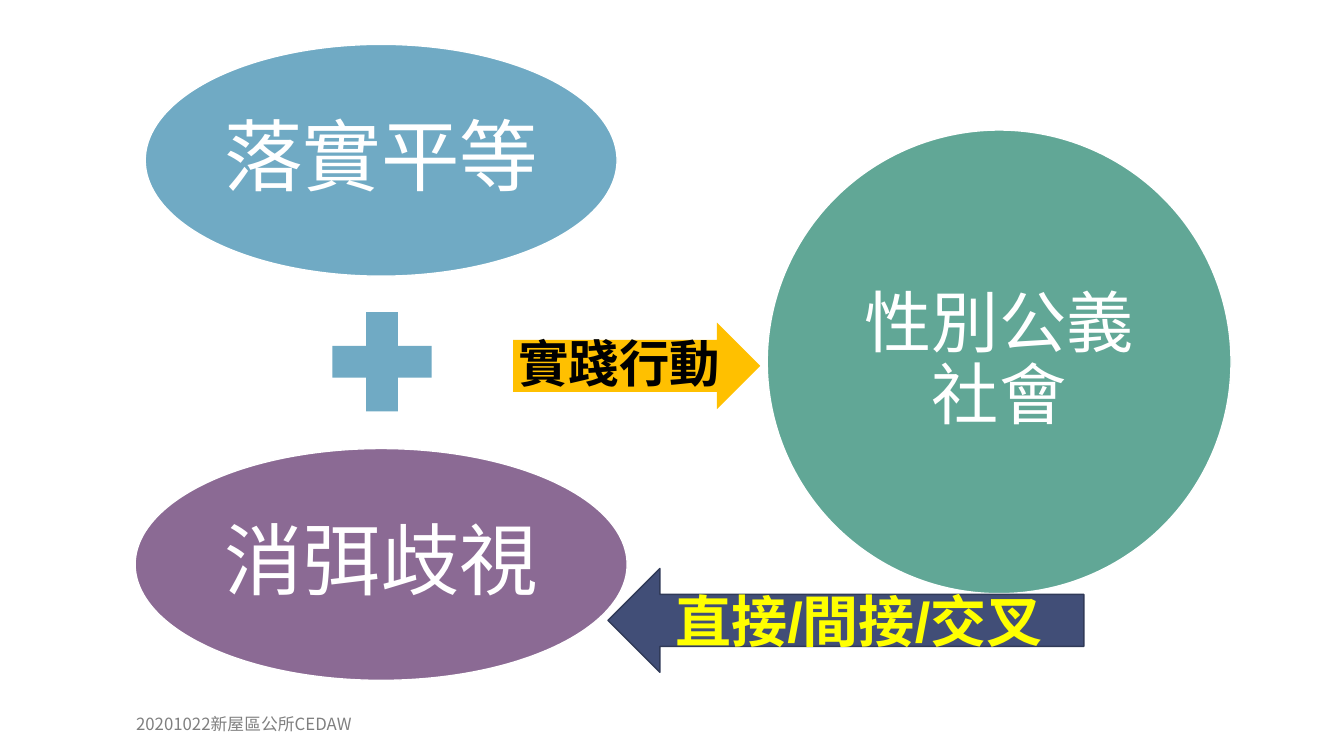
from dataclasses import dataclass

from pptx import Presentation
from pptx.dml.color import RGBColor
from pptx.enum import shapes, text
from pptx.util import Inches, Pt


@dataclass(frozen=True)
class Theme:
    # Colours
    white: str = "FFFFFF"
    black: str = "000000"
    yellow: str = "FFFF00"
    grey: str = "808080"
    blue: str = "70AAC4"
    purple: str = "8B6A94"
    green: str = "61A796"
    amber: str = "FFC000"
    navy: str = "414E77"
    navy_edge: str = "303A58"
    # Type
    display_font: str = "Quicksand"
    label_font: str = "Arial"
    footer_font: str = "Noto Sans CJK TC"
    concept_size: int = 56
    goal_size: int = 48
    type_size: int = 40
    action_size: int = 36
    footer_size: int = 12
    tight: float = 0.9


class SlideBuilder:
    def __init__(self, slide, theme):
        self.slide = slide
        self.theme = theme

    def preset(self, kind, box, fill, edge=None):
        shape = self.slide.shapes.add_shape(kind, *map(Inches, box))
        shape.shadow.inherit = False
        shape.fill.solid()
        shape.fill.fore_color.rgb = RGBColor.from_string(fill)
        if edge:
            shape.line.color.rgb = RGBColor.from_string(edge)
            shape.line.width = Pt(1)
        else:
            shape.line.fill.background()
        return shape

    def label(self, shape, words, font, size, color, bold=False, spacing=None,
              insets=(0.1, 0.05, 0.1, 0.05), align=text.PP_ALIGN.CENTER,
              anchor=text.MSO_ANCHOR.MIDDLE):
        frame = shape.text_frame
        frame.word_wrap = True
        frame.vertical_anchor = anchor
        (frame.margin_left, frame.margin_top,
         frame.margin_right, frame.margin_bottom) = map(Inches, insets)
        paragraph = frame.paragraphs[0]
        paragraph.text = words
        paragraph.alignment = align
        if spacing:
            paragraph.line_spacing = spacing
        paragraph.font.name = font
        paragraph.font.size = Pt(size)
        paragraph.font.bold = bold
        paragraph.font.color.rgb = RGBColor.from_string(color)

    def ellipse(self, box, words, fill, size, inset):
        theme = self.theme
        shape = self.preset(shapes.MSO_SHAPE.OVAL, box, fill, theme.white)
        self.label(shape, words, theme.display_font, size, theme.white,
                   spacing=theme.tight, insets=(inset,) * 4)

    def plus(self, box, fill):
        self.preset(shapes.MSO_SHAPE.MATH_PLUS, box, fill)

    def action_arrow(self, box, words):
        theme = self.theme
        shape = self.preset(shapes.MSO_SHAPE.RIGHT_ARROW, box, theme.amber)
        shape.adjustments[0] = 0.6
        self.label(shape, words, theme.display_font, theme.action_size,
                   theme.black, bold=True, spacing=theme.tight,
                   insets=(0, 0, 0.09, 0))

    def type_arrow(self, box, words):
        theme = self.theme
        shape = self.preset(shapes.MSO_SHAPE.LEFT_ARROW, box, theme.navy,
                            theme.navy_edge)
        self.label(shape, words, theme.label_font, theme.type_size,
                   theme.yellow, bold=True)

    def footer(self, box, words):
        theme = self.theme
        shape = self.slide.shapes.add_textbox(*map(Inches, box))
        self.label(shape, words, theme.footer_font, theme.footer_size,
                   theme.grey, insets=(0.13, 0.07, 0.13, 0.07),
                   align=text.PP_ALIGN.LEFT, anchor=text.MSO_ANCHOR.BOTTOM)


def main():
    presentation = Presentation()
    presentation.slide_width = Inches(13.33)
    presentation.slide_height = Inches(7.5)
    slide = presentation.slides.add_slide(presentation.slide_layouts[6])
    theme = Theme()
    builder = SlideBuilder(slide, theme)

    # Two conditions joined by a plus
    builder.ellipse((1.44, 0.44, 4.68, 2.3), "落實平等", theme.blue,
                    theme.concept_size, 0.08)
    builder.plus((3.12, 2.92, 1.34, 1.34), theme.blue)
    builder.ellipse((1.34, 4.45, 4.88, 2.3), "消弭歧視", theme.purple,
                    theme.concept_size, 0.08)

    # Action leading to the goal
    builder.action_arrow((5.09, 3.2, 2.45, 0.86), "實踐行動")
    builder.ellipse((7.61, 1.29, 4.6, 4.6), "性別公義社會", theme.green,
                    theme.goal_size, 0.07)

    # Footer and kinds of discrimination
    builder.footer((1.22, 7, 3, 0.35), "20201022新屋區公所CEDAW")
    builder.type_arrow((6.03, 5.64, 4.72, 1.03), "直接/間接/交叉")

    presentation.save("out.pptx")


if __name__ == "__main__":
    main()
